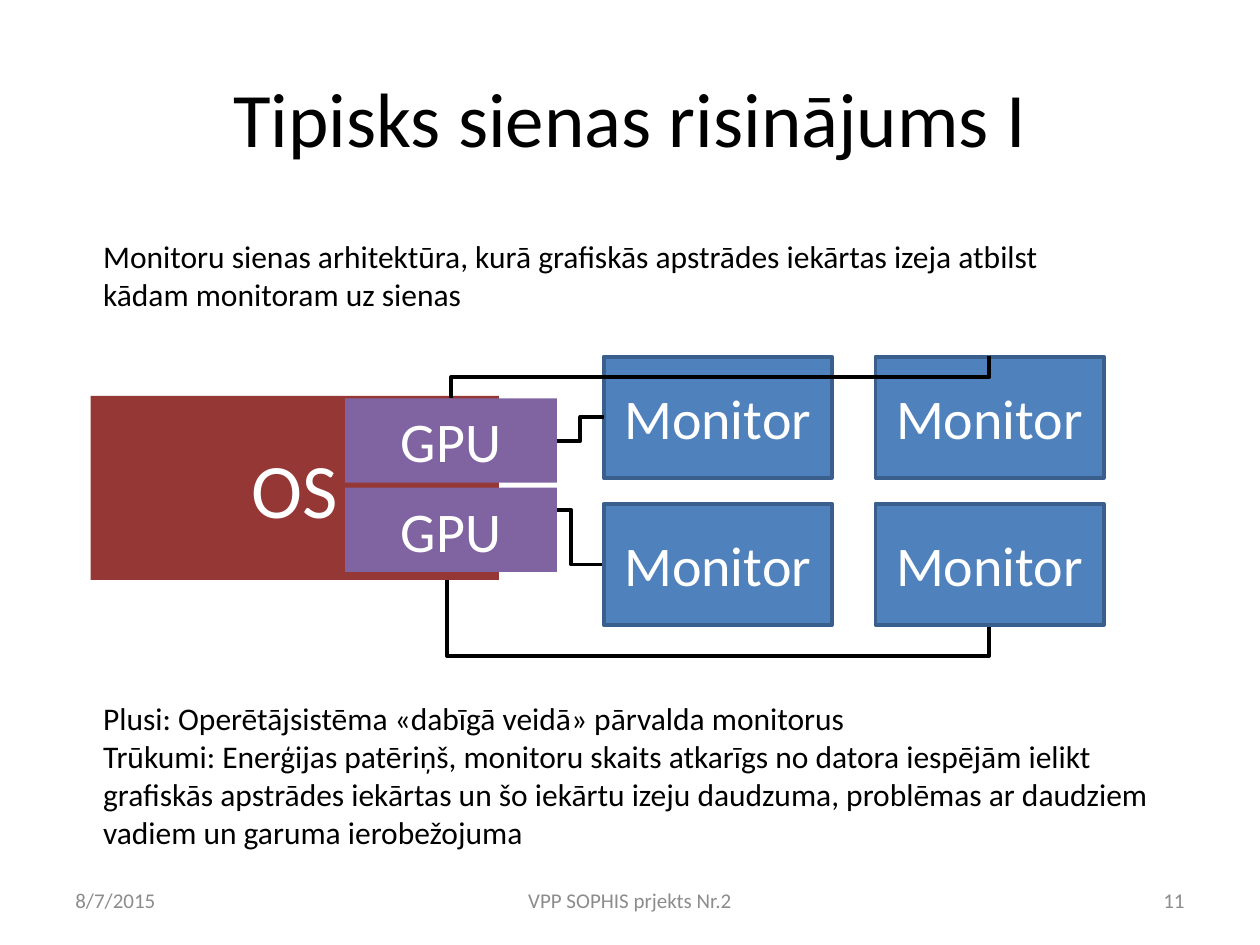
from lxml import etree
from pptx import Presentation
from pptx.dml.color import RGBColor
from pptx.enum.shapes import MSO_CONNECTOR, MSO_SHAPE
from pptx.enum.text import MSO_ANCHOR, PP_ALIGN
from pptx.oxml.ns import qn
from pptx.util import Cm, Pt

ELBOW = MSO_CONNECTOR.ELBOW
RECT = MSO_SHAPE.RECTANGLE
LEFT, MID, RIGHT = PP_ALIGN.LEFT, PP_ALIGN.CENTER, PP_ALIGN.RIGHT
TOP, CENTER = MSO_ANCHOR.TOP, MSO_ANCHOR.MIDDLE

THEME = {
    "font": "Calibri",
    "ink": RGBColor(0x00, 0x00, 0x00),
    "white": RGBColor(0xFF, 0xFF, 0xFF),
    "gray": RGBColor(0x8C, 0x8C, 0x8C),
    "os": RGBColor(0x95, 0x37, 0x35),
    "gpu": RGBColor(0x80, 0x64, 0xA2),
    "screen": RGBColor(0x4F, 0x81, 0xBD),
    "edge": RGBColor(0x3A, 0x5F, 0x8C),
    "title": Pt(44),
    "label": Pt(32),
    "text": Pt(18),
    "foot": Pt(12),
    "line": Pt(2.25),
}


def write(shape, text, size, ink, align=MID, anchor=CENTER):
    """Fill a shape with text, one paragraph a line."""
    frame = shape.text_frame
    frame.word_wrap = True
    frame.vertical_anchor = anchor
    frame.text = text
    look = {"name": THEME["font"], "size": THEME[size]}
    for para in frame.paragraphs:
        para.alignment = align
        for key, val in look.items():
            setattr(para.runs[0].font, key, val)
        para.runs[0].font.color.rgb = THEME[ink]


def wire(x, y, w, h, flip="", turn=0, bends=(0.5,)):
    """Draw an elbow line from its unturned box, flips, turn and bend ratios."""
    x1, x2 = (x + w, x) if "h" in flip else (x, x + w)
    y1, y2 = (y + h, y) if "v" in flip else (y, y + h)
    line = slide.shapes.add_connector(ELBOW, Cm(x1), Cm(y1), Cm(x2), Cm(y2))
    line.line.color.rgb = THEME["ink"]
    line.line.width = THEME["line"]
    props = line._element.spPr
    etree.SubElement(props, qn("a:effectLst"))
    props.find(qn("a:xfrm")).set("rot", str(turn * 60000))
    geom = props.find(qn("a:prstGeom"))
    geom.set("prst", f"bentConnector{len(bends) + 2}")
    guides = geom.find(qn("a:avLst"))
    if guides is None:
        guides = etree.SubElement(geom, qn("a:avLst"))
    for i, bend in enumerate(bends, 1):
        name = "adj" if len(bends) == 1 else f"adj{i}"
        etree.SubElement(guides, qn("a:gd"), name=name,
                         fmla=f"val {round(bend * 100000)}")


deck = Presentation()
deck.slide_width, deck.slide_height = Cm(25.4), Cm(19.05)
slide = deck.slides.add_slide(deck.slide_layouts[5])

# Title
title = slide.shapes.title
place = {"left": Cm(1.27), "top": Cm(0.76), "width": Cm(22.86), "height": Cm(3.18)}
for key, val in place.items():
    setattr(title, key, val)
write(title, "Tipisks sienas risinājums I", "title", "ink")

# Wires that run behind the boxes
wire(10.87, 10.29, 1.3, 1.09)
wire(13.61, 6.27, 1.45, 11.2, "h", 90, (-0.435, 0.975))

# Computer, graphics cards and the wall of two by two monitors
boxes = [("OS", 1.83, 7.98, 8.23, 3.71, "os", "title")]
boxes += [("GPU", 6.96, 8.03 + 1.8 * i, 4.27, 1.7, "gpu", "label") for i in (1, 0)]
boxes += [("Monitor", 12.17 + 5.48 * col, 7.19 + 2.97 * row, 4.6, 2.44, "screen", "label")
          for row in range(2) for col in range(2)]
for text, x, y, w, h, fill, size in boxes:
    box = slide.shapes.add_shape(RECT, Cm(x), Cm(y), Cm(w), Cm(h))
    box.shadow.inherit = False
    box.fill.solid()
    box.fill.fore_color.rgb = THEME[fill]
    if fill == "screen":
        box.line.color.rgb = THEME["edge"]
        box.line.width = THEME["line"]
    else:
        box.line.fill.background()
    write(box, text, size, "white")

# Wires in front
wire(14.1, 2.18, 0.84, 10.85, "hv", 270, (-0.705,))
wire(11.23, 8.41, 0.94, 0.48, "v")

# Notes and footer
intro = ("Monitoru sienas arhitektūra, kurā grafiskās apstrādes iekārtas "
         "izeja atbilst kādam monitoram uz sienas")
review = ("Plusi: Operētājsistēma «dabīgā veidā» pārvalda monitorus\n"
          "Trūkumi: Enerģijas patēriņš, monitoru skaits atkarīgs no datora "
          "iespējām ielikt grafiskās apstrādes iekārtas un šo iekārtu izeju "
          "daudzuma, problēmas ar daudziem vadiem un garuma ierobežojuma")
texts = [
    (intro, 1.83, 4.65, 21.03, 1.8, "text", "ink", LEFT, TOP),
    (review, 1.83, 13.97, 21.67, 3.33, "text", "ink", LEFT, TOP),
    ("8/7/2015", 1.27, 17.65, 5.93, 1.01, "foot", "gray", LEFT, CENTER),
    ("VPP SOPHIS prjekts Nr.2", 8.68, 17.65, 8.04, 1.01, "foot", "gray", MID, CENTER),
    ("11", 18.2, 17.65, 5.93, 1.01, "foot", "gray", RIGHT, CENTER),
]
for text, x, y, w, h, *look in texts:
    write(slide.shapes.add_textbox(Cm(x), Cm(y), Cm(w), Cm(h)), text, *look)

deck.save("out.pptx")
